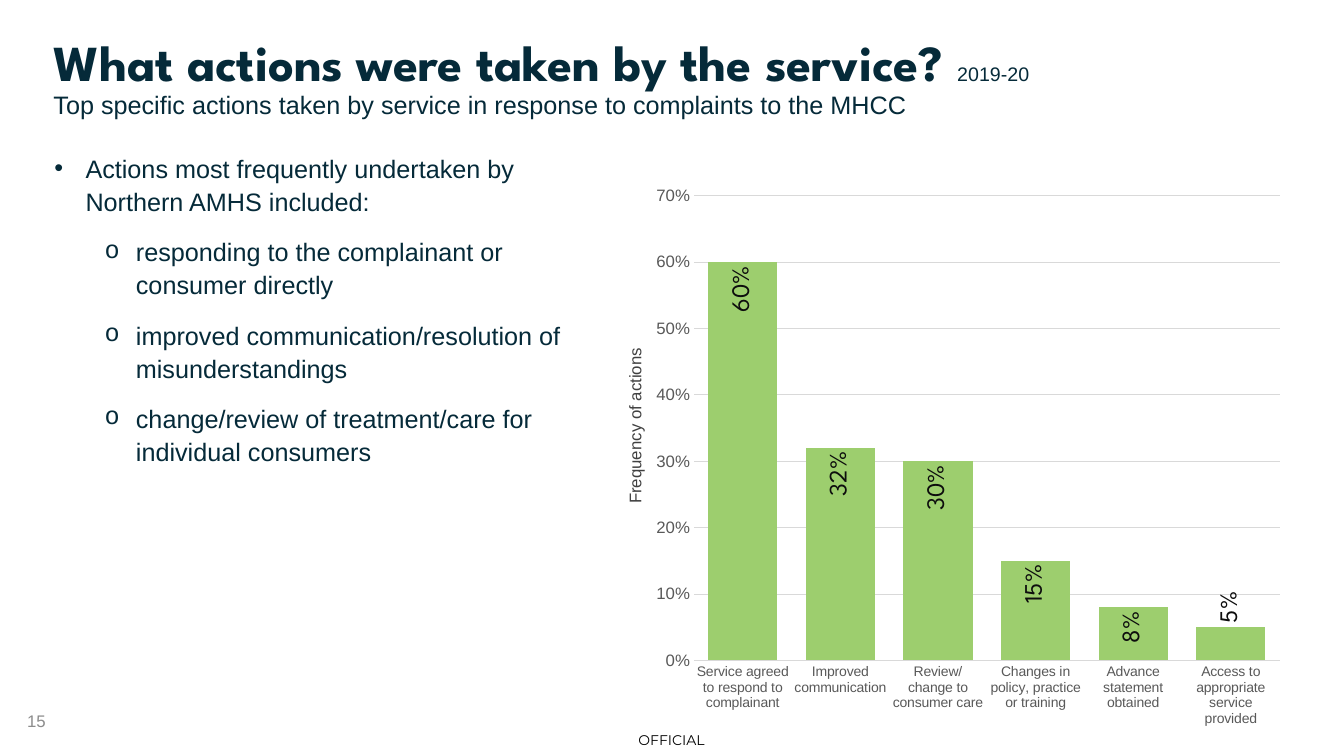
from dataclasses import dataclass

from lxml import etree
from pptx import Presentation
from pptx.chart.data import CategoryChartData
from pptx.dml.color import RGBColor
from pptx.enum.chart import XL_CHART_TYPE, XL_LABEL_POSITION, XL_TICK_MARK
from pptx.enum.text import MSO_ANCHOR, MSO_AUTO_SIZE, PP_ALIGN
from pptx.oxml import parse_xml
from pptx.oxml.ns import nsdecls, qn
from pptx.util import Inches, Pt


@dataclass(frozen=True)
class Theme:
    body_font: str = "Arial"
    display_font: str = "League Spartan"
    marking_font: str = "Montserrat"
    navy: str = "052A39"
    black: str = "000000"
    near_black: str = "0D0D0D"
    dark_grey: str = "404040"
    axis_grey: str = "595959"
    page_grey: str = "8C8C8C"
    grid_grey: str = "D9D9D9"
    green: str = "9DCE6E"
    title: int = 36
    body: int = 18
    period: int = 14
    label: int = 12
    small: int = 10


class SlideBuilder:
    def __init__(self, slide, theme):
        self.slide = slide
        self.theme = theme

    def style(self, font, size, color, name=None, bold=False):
        font.name = name or self.theme.body_font
        font.size = Pt(size)
        font.bold = bold
        font.color.rgb = RGBColor.from_string(color)

    def run(self, paragraph, text, size, color, name=None, bold=False):
        run = paragraph.add_run()
        run.text = text
        self.style(run.font, size, color, name, bold)

    def frame(self, box, anchor=MSO_ANCHOR.TOP):
        frame = box.text_frame
        frame.word_wrap = True
        frame.auto_size = MSO_AUTO_SIZE.NONE
        frame.vertical_anchor = anchor
        return frame

    def title(self, bounds, lines):
        heading = self.slide.shapes.title
        heading.left, heading.top, heading.width, heading.height = map(Inches, bounds)
        frame = self.frame(heading)
        for index, runs in enumerate(lines):
            paragraph = frame.add_paragraph() if index else frame.paragraphs[0]
            paragraph.alignment = PP_ALIGN.LEFT
            paragraph.line_spacing = 0.9
            for run in runs:
                self.run(paragraph, *run)

    def label(self, bounds, text, size, color, name=None,
              align=PP_ALIGN.CENTER, rotation=0, inset=None):
        box = self.slide.shapes.add_textbox(*map(Inches, bounds))
        box.rotation = rotation
        frame = self.frame(box, MSO_ANCHOR.MIDDLE)
        if inset is not None:
            frame.margin_left = frame.margin_right = Inches(inset)
            frame.margin_top = frame.margin_bottom = Inches(inset)
        paragraph = frame.paragraphs[0]
        paragraph.alignment = align
        self.run(paragraph, text, size, color, name)

    def bullets(self, bounds, items):
        theme = self.theme
        frame = self.frame(self.slide.shapes.add_textbox(*map(Inches, bounds)))
        for index, (level, text) in enumerate(items):
            paragraph = frame.add_paragraph() if index else frame.paragraphs[0]
            paragraph.level = level
            paragraph.line_spacing = 1.1
            paragraph.space_before = Pt(6 if index else 0)
            paragraph.space_after = Pt(6)
            props = paragraph._p.get_or_add_pPr()
            props.set("marL", str(Inches(0.31 + 0.5 * level)))
            props.set("indent", str(Inches(-0.31)))
            color = etree.SubElement(props, qn("a:buClr"))
            etree.SubElement(color, qn("a:srgbClr")).set("val", theme.navy)
            typeface = "Courier New" if level else theme.body_font
            etree.SubElement(props, qn("a:buFont")).set("typeface", typeface)
            etree.SubElement(props, qn("a:buChar")).set("char", "•o"[level])
            self.run(paragraph, text, theme.body, theme.navy)

    def columns(self, bounds, plot_area, shares):
        theme = self.theme
        data = CategoryChartData(number_format="0%")
        data.categories = list(shares)
        data.add_series("Series 1", list(shares.values()))
        chart = self.slide.shapes.add_chart(
            XL_CHART_TYPE.COLUMN_CLUSTERED, *map(Inches, bounds), data).chart
        chart.has_legend = chart.has_title = False
        self.style(chart.font, theme.small, theme.black)

        # Axes
        actions, frequency = chart.category_axis, chart.value_axis
        for axis, size in ((actions, theme.small), (frequency, theme.label)):
            axis.major_tick_mark = axis.minor_tick_mark = XL_TICK_MARK.NONE
            self.style(axis.tick_labels.font, size, theme.axis_grey)
        frequency.minimum_scale, frequency.maximum_scale = 0, 0.7
        frequency.major_unit = 0.1
        frequency.tick_labels.number_format = "0%"
        frequency.tick_labels.number_format_is_linked = False
        frequency.format.line.fill.background()
        for line in (actions.format.line, frequency.major_gridlines.format.line):
            line.color.rgb = RGBColor.from_string(theme.grid_grey)
            line.width = Pt(0.75)

        # Columns and their upright labels; a column too short for its label wears it on top
        plot = chart.plots[0]
        plot.gap_width = 41
        plot.vary_by_categories = False
        series = plot.series[0]
        series.format.fill.solid()
        series.format.fill.fore_color.rgb = RGBColor.from_string(theme.green)
        labels = series.data_labels
        labels.show_value = True
        labels.position = XL_LABEL_POSITION.INSIDE_END
        labels.number_format = "0%"
        labels.number_format_is_linked = False
        short = [series.points[index].data_label
                 for index, share in enumerate(shares.values()) if share < 0.06]
        for label in short:
            label.position = XL_LABEL_POSITION.OUTSIDE_END
        for label in (labels, *short):
            self.style(label.font, theme.body, theme.near_black, theme.display_font)
        for turn in labels._element.iter(qn("a:bodyPr")):
            turn.set("rot", "-5400000")
            turn.set("vert", "horz")

        # Fixed inner plot area
        settings = [("layoutTarget", "inner"), ("xMode", "edge"), ("yMode", "edge")]
        settings += zip("xywh", plot_area)
        manual = "".join(f'<c:{tag} val="{value}"/>' for tag, value in settings)
        layout = parse_xml(f'<c:layout {nsdecls("c")}><c:manualLayout>{manual}'
                           '</c:manualLayout></c:layout>')
        area = chart._chartSpace.chart.plotArea
        for automatic in area.findall(qn("c:layout")):
            area.remove(automatic)
        area.insert(0, layout)


def main():
    theme = Theme()
    deck = Presentation()
    deck.slide_width, deck.slide_height = Inches(13.33), Inches(7.5)
    page = SlideBuilder(deck.slides.add_slide(deck.slide_layouts[5]), theme)

    # Marking and page number
    page.label((6.15, 7.19, 1.02, 0.31), "OFFICIAL", theme.small, theme.black,
               theme.marking_font, inset=0)
    page.label((0.17, 6.95, 3, 0.4), "15", theme.label, theme.page_grey,
               align=PP_ALIGN.LEFT)

    # Findings
    page.bullets((0.44, 1.44, 5.64, 3.25), [
        (0, "Actions most frequently undertaken by Northern AMHS included:"),
        (1, "responding to the complainant or consumer directly"),
        (1, "improved communication/resolution of misunderstandings"),
        (1, "change/review of treatment/care for individual consumers"),
    ])

    # Frequency chart
    page.columns((6.51, 0.78, 6.38, 6.43), (0.058, 0.183, 0.911, 0.725), {
        "Service agreed to respond to complainant": 0.6,
        "Improved communication": 0.32,
        "Review/change to consumer care": 0.3,
        "Changes in policy, practice or training": 0.15,
        "Advance statement obtained": 0.08,
        "Access to appropriate service provided": 0.05,
    })
    page.label((5.12, 4.01, 2.35, 0.43), "Frequency of actions", theme.label,
               theme.dark_grey, rotation=270)

    # Title and subtitle
    page.title((0.43, 0.33, 12.48, 0.93), [
        [("What actions were taken by the service? ", theme.title, theme.navy,
          theme.display_font, True),
         ("2019-20", theme.period, theme.navy)],
        [("Top specific actions taken by service in response to complaints to the MHCC",
          theme.body, theme.navy)],
    ])

    deck.save("out.pptx")


if __name__ == "__main__":
    main()
